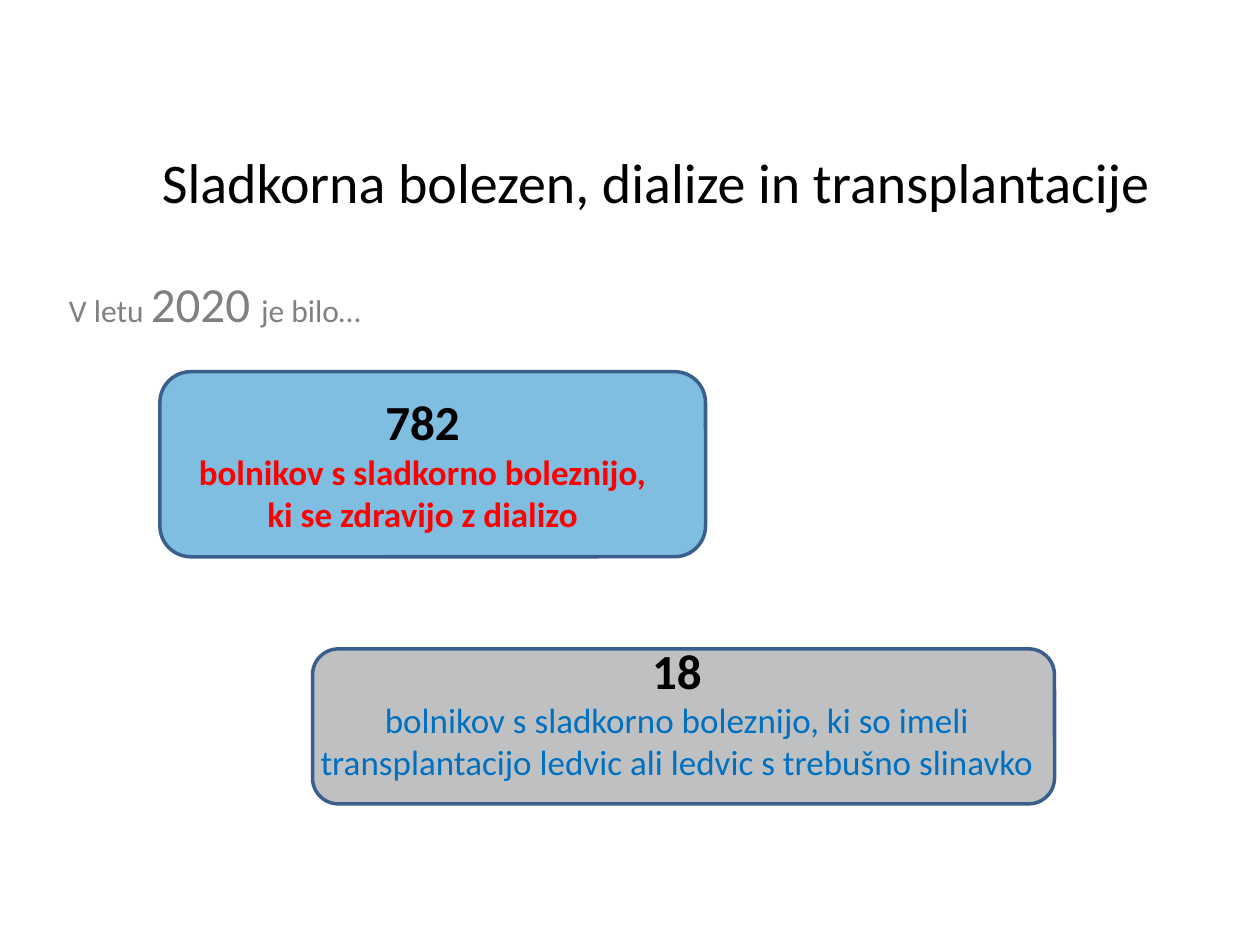
from lxml.etree import SubElement
from pptx import Presentation
from pptx.dml.color import RGBColor
from pptx.enum.shapes import MSO_SHAPE
from pptx.enum.text import MSO_ANCHOR, MSO_AUTO_SIZE, PP_ALIGN
from pptx.oxml.ns import qn
from pptx.util import Pt

FONT = "Calibri"
BLACK = "000000"


def style(font, size, color, bold=False):
    font.name = FONT
    font.size = Pt(size)
    font.bold = bold
    font.color.rgb = RGBColor.from_string(color)


def place(shape, box):
    shape.left, shape.top, shape.width, shape.height = map(Pt, box)


def add_title(slide, text, box, indent):
    title = slide.shapes.title
    place(title, box)
    frame = title.text_frame
    frame.text = text
    frame.auto_size = MSO_AUTO_SIZE.NONE
    frame.vertical_anchor = MSO_ANCHOR.TOP
    frame.margin_left = Pt(indent)
    para = frame.paragraphs[0]
    para.alignment = PP_ALIGN.CENTER
    style(para.font, 32, BLACK)


def add_intro(slide, box, parts):
    """Add one line whose parts are (text, size) pairs."""
    frame = slide.shapes.add_textbox(*map(Pt, box)).text_frame
    frame.word_wrap = False
    para = frame.paragraphs[0]
    para.alignment = PP_ALIGN.CENTER
    for text, size in parts:
        run = para.add_run()
        run.text = text
        style(run.font, size, "808080")


def add_panel(slide, box, color):
    """Add a half-transparent rounded panel."""
    panel = slide.shapes.add_shape(MSO_SHAPE.ROUNDED_RECTANGLE, *map(Pt, box))
    panel.shadow.inherit = False
    panel.fill.solid()
    panel.fill.fore_color.rgb = RGBColor.from_string(color)
    tone = panel._element.spPr.find(qn("a:solidFill"))[0]
    SubElement(tone, qn("a:alpha"), val="50000")
    panel.line.color.rgb = RGBColor.from_string("3A5F8C")
    panel.line.width = Pt(2)


def add_fact(slide, box, count, lines, color, bold):
    """Add a large count above its explanation."""
    frame = slide.shapes.add_textbox(*map(Pt, box)).text_frame
    frame.word_wrap = True
    frame.text = "\n".join([count, *lines])
    for i, para in enumerate(frame.paragraphs):
        para.alignment = PP_ALIGN.CENTER
        if i == 0:
            style(para.font, 28, BLACK, True)
        else:
            style(para.font, 20, color, bold)


def main():
    deck = Presentation()
    deck.slide_width, deck.slide_height = Pt(720), Pt(540)
    slide = deck.slides.add_slide(deck.slide_layouts[5])

    add_title(slide, "Sladkorna bolezen, dialize in transplantacije",
              (14.4, 80.6, 652.3, 98.6), 76)
    add_intro(slide, (31, 152.6, 183.6, 41),
              [("V letu ", 18), ("2020 ", 28), ("je bilo…", 18)])

    add_panel(slide, (91.4, 212.4, 311.8, 105.8), "007DC5")
    add_fact(slide, (87, 220.3, 309, 113.8), "782",
             ["bolnikov s sladkorno boleznijo,", "ki se zdravijo z dializo"],
             "FF0000", True)

    add_panel(slide, (178.6, 370.8, 424, 88.6), "808285")
    add_fact(slide, (155, 362.2, 463.7, 64.8), "18",
             ["bolnikov s sladkorno boleznijo, ki so imeli "
              "transplantacijo ledvic ali ledvic s trebušno slinavko"],
             "0070C0", False)

    deck.save("out.pptx")


if __name__ == "__main__":
    main()
